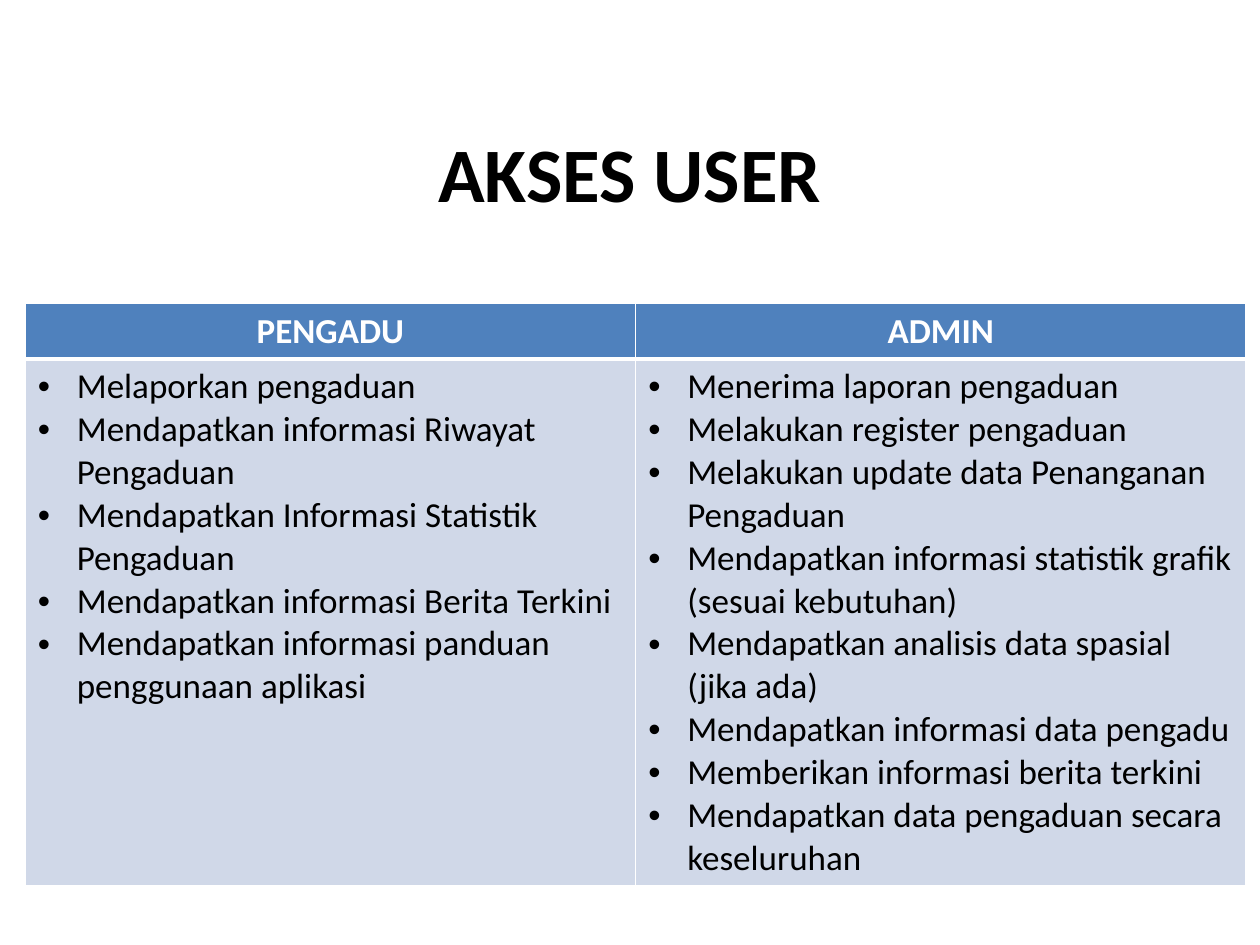
from dataclasses import dataclass

from lxml import etree
from pptx import Presentation
from pptx.dml.color import RGBColor
from pptx.enum.text import MSO_ANCHOR, PP_ALIGN
from pptx.oxml.ns import qn
from pptx.util import Inches, Pt

CENTER, LEFT = PP_ALIGN.CENTER, PP_ALIGN.LEFT
MIDDLE = MSO_ANCHOR.MIDDLE

BLACK = RGBColor(0x00, 0x00, 0x00)
WHITE = RGBColor(0xFF, 0xFF, 0xFF)
HEADER_BLUE = RGBColor(0x4F, 0x81, 0xBD)
BODY_BLUE = RGBColor(0xD0, 0xD8, 0xE8)
FONT = "Calibri"
BULLET_INDENT = Inches(0.31)
THIN, THICK = Pt(1), Pt(3)


@dataclass
class UserRole:
    name: str
    permissions: list[str]


ROLES = [
    UserRole("PENGADU", [
        "Melaporkan pengaduan",
        "Mendapatkan informasi Riwayat Pengaduan",
        "Mendapatkan Informasi Statistik Pengaduan",
        "Mendapatkan informasi Berita Terkini",
        "Mendapatkan informasi panduan penggunaan aplikasi",
    ]),
    UserRole("ADMIN", [
        "Menerima laporan pengaduan",
        "Melakukan register pengaduan",
        "Melakukan update data Penanganan Pengaduan",
        "Mendapatkan informasi statistik grafik (sesuai kebutuhan)",
        "Mendapatkan analisis data spasial (jika ada)",
        "Mendapatkan informasi data pengadu",
        "Memberikan informasi berita terkini",
        "Mendapatkan data pengaduan secara keseluruhan",
    ]),
]


def format_paragraph(paragraph, size: int, color: RGBColor, bold: bool, alignment) -> None:
    paragraph.alignment = alignment
    for run in paragraph.runs:
        font = run.font
        font.name, font.size, font.bold = FONT, Pt(size), bold
        font.color.rgb = color


def add_bullet(paragraph) -> None:
    properties = paragraph._p.get_or_add_pPr()
    properties.set("marL", str(BULLET_INDENT))
    properties.set("indent", str(-BULLET_INDENT))
    etree.SubElement(properties, qn("a:buFont"), typeface="Arial")
    etree.SubElement(properties, qn("a:buChar"), char="•")


def style_cell(cell, fill: RGBColor, top: int, bottom: int) -> None:
    """Give the cell white borders and a solid fill; borders must come first in the XML."""
    properties = cell._tc.get_or_add_tcPr()
    for side, width in (("L", THIN), ("R", THIN), ("T", top), ("B", bottom)):
        line = etree.SubElement(properties, qn(f"a:ln{side}"), w=str(width))
        line_fill = etree.SubElement(line, qn("a:solidFill"))
        etree.SubElement(line_fill, qn("a:srgbClr"), val=str(WHITE))
    cell.fill.solid()
    cell.fill.fore_color.rgb = fill


def add_title(slide, text: str) -> None:
    title = slide.shapes.title
    title.left, title.top = Inches(0.5), Inches(0.46)
    title.width, title.height = Inches(9), Inches(1.8)
    title.text_frame.text = text
    title.text_frame.vertical_anchor = MIDDLE
    format_paragraph(title.text_frame.paragraphs[0], 44, BLACK, True, CENTER)


def add_role_table(slide, roles: list[UserRole]) -> None:
    table = slide.shapes.add_table(
        2, len(roles), Inches(0.2), Inches(2.41), Inches(9.69), Inches(4.61)
    ).table
    table.rows[0].height = Inches(0.43)
    table.rows[1].height = Inches(4.18)
    for column, role in enumerate(roles):
        header, body = table.cell(0, column), table.cell(1, column)
        style_cell(header, HEADER_BLUE, THIN, THICK)
        header.text_frame.text = role.name
        format_paragraph(header.text_frame.paragraphs[0], 20, WHITE, True, CENTER)

        style_cell(body, BODY_BLUE, THICK, THIN)
        body.text_frame.text = "\n".join(role.permissions)
        for paragraph in body.text_frame.paragraphs:
            add_bullet(paragraph)
            format_paragraph(paragraph, 20, BLACK, False, LEFT)


def main() -> None:
    presentation = Presentation()
    presentation.slide_width, presentation.slide_height = Inches(10), Inches(7.5)
    slide = presentation.slides.add_slide(presentation.slide_layouts[5])
    add_title(slide, "AKSES USER")
    add_role_table(slide, ROLES)
    presentation.save("out.pptx")


if __name__ == "__main__":
    main()
